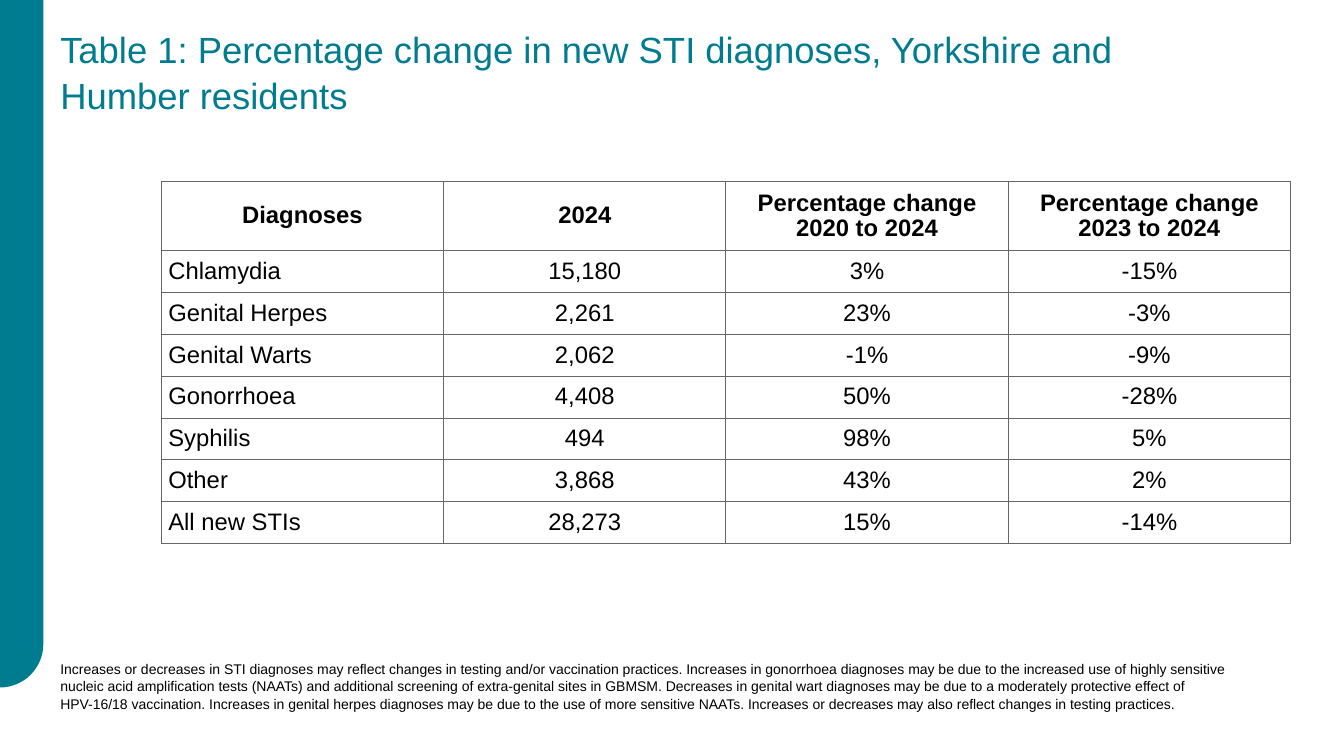
import math

from lxml import etree
from pptx import Presentation
from pptx.dml.color import RGBColor
from pptx.enum.text import MSO_ANCHOR, PP_ALIGN
from pptx.oxml.ns import qn
from pptx.util import Inches, Pt

LEFT, CENTER = PP_ALIGN.LEFT, PP_ALIGN.CENTER
MIDDLE = MSO_ANCHOR.MIDDLE
FONT = "Arial"
COLORS = {"teal": "007C91", "black": "000000", "white": "FFFFFF", "grid": "666666"}

TITLE = "Table 1: Percentage change in new STI diagnoses, Yorkshire and Humber residents"
FOOTNOTE = (
    "Increases or decreases in STI diagnoses may reflect changes in testing and/or "
    "vaccination practices. Increases in gonorrhoea diagnoses may be due to the increased "
    "use of highly sensitive nucleic acid amplification tests (NAATs) and additional "
    "screening of extra-genital sites in GBMSM. Decreases in genital wart diagnoses may be "
    "due to a moderately protective effect of HPV-16/18 vaccination. Increases in genital "
    "herpes diagnoses may be due to the use of more sensitive NAATs. Increases or decreases "
    "may also reflect changes in testing practices."
)
DIAGNOSES = [
    ("Diagnoses", "2024", "Percentage change\n2020 to 2024", "Percentage change\n2023 to 2024"),
    ("Chlamydia", "15,180", "3%", "-15%"),
    ("Genital Herpes", "2,261", "23%", "-3%"),
    ("Genital Warts", "2,062", "-1%", "-9%"),
    ("Gonorrhoea", "4,408", "50%", "-28%"),
    ("Syphilis", "494", "98%", "5%"),
    ("Other", "3,868", "43%", "2%"),
    ("All new STIs", "28,273", "15%", "-14%"),
]


def rgb(name):
    return RGBColor.from_string(COLORS[name])


def write(para, text, size, color="black", bold=False, align=LEFT, spacing=1.0):
    """Fill a paragraph, with a line break at each newline."""
    para.alignment = align
    para.line_spacing = spacing
    for index, line in enumerate(text.split("\n")):
        if index:
            para.add_line_break()
        span = para.add_run()
        span.text = line
        span.font.name = FONT
        span.font.size = Pt(size)
        span.font.bold = bold
        span.font.color.rgb = rgb(color)


def add_text(page, top, height, text, size, color, spacing):
    box = page.shapes.add_textbox(Inches(0.5), Inches(top), Inches(12), Inches(height))
    box.text_frame.word_wrap = True
    write(box.text_frame.paragraphs[0], text, size, color, spacing=spacing)


def add_side_band(page, width, height):
    """Draw the left band, its lower right corner rounded by a quarter circle."""
    angles = [math.radians(degree) for degree in range(0, 91, 3)]
    corner = [
        (Inches(width * math.cos(angle)), Inches(height - width + width * math.sin(angle)))
        for angle in angles
    ]
    outline = page.shapes.build_freeform(0, 0)
    outline.add_line_segments([(Inches(width), 0)] + corner, close=True)
    band = outline.convert_to_shape()
    band.shadow.inherit = False
    band.fill.solid()
    band.fill.fore_color.rgb = rgb("teal")
    band.line.fill.background()


def set_borders(cell):
    properties = cell._tc.get_or_add_tcPr()
    for position, side in enumerate(("a:lnL", "a:lnR", "a:lnT", "a:lnB")):
        line = etree.Element(qn(side), w=str(Pt(0.75)))
        fill = etree.SubElement(line, qn("a:solidFill"))
        etree.SubElement(fill, qn("a:srgbClr"), val=COLORS["grid"])
        properties.insert(position, line)


def add_diagnoses_table(page):
    frame = page.shapes.add_table(
        len(DIAGNOSES), len(DIAGNOSES[0]), Inches(1.6), Inches(1.8), Inches(11.2), Inches(3.47)
    )
    table = frame.table
    for row_index, values in enumerate(DIAGNOSES):
        header = row_index == 0
        table.rows[row_index].height = Inches(0.67 if header else 0.4)
        for column_index, value in enumerate(values):
            cell = table.cell(row_index, column_index)
            cell.fill.solid()
            cell.fill.fore_color.rgb = rgb("white")
            cell.vertical_anchor = MIDDLE
            cell.margin_left = cell.margin_right = Inches(0.07)
            cell.margin_top = cell.margin_bottom = Inches(0.07)
            align = CENTER if header or column_index else LEFT
            write(cell.text_frame.paragraphs[0], value, 17, bold=header, align=align, spacing=0.97)
            set_borders(cell)


def main():
    deck = Presentation()
    deck.slide_width, deck.slide_height = Inches(13.33), Inches(7.5)
    page = deck.slides.add_slide(deck.slide_layouts[6])
    add_side_band(page, 0.43, 6.82)
    add_text(page, 6.5, 0.3, FOOTNOTE, 10, "black", 1.03)
    add_text(page, 0.2, 0.46, TITLE, 26, "teal", 1.05)
    add_diagnoses_table(page)
    deck.save("out.pptx")


if __name__ == "__main__":
    main()
